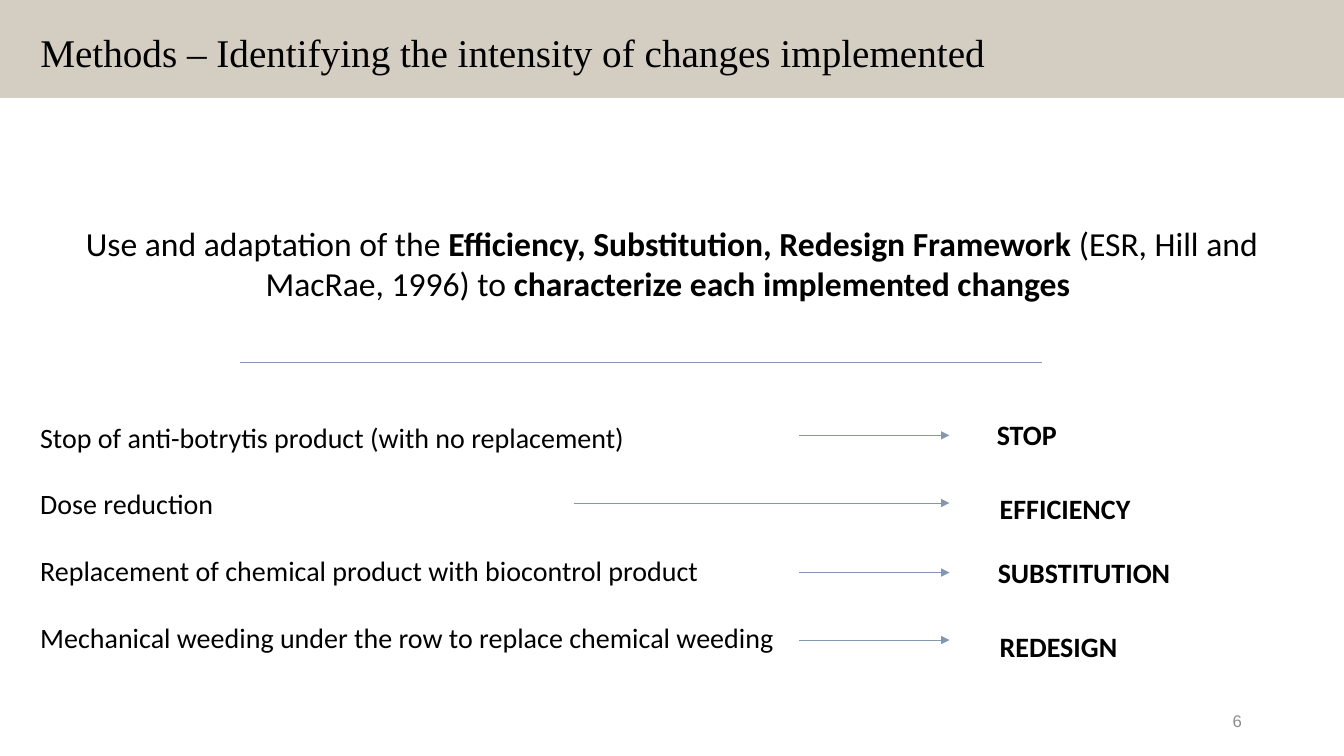
from lxml import etree
from pptx import Presentation
from pptx.dml.color import RGBColor
from pptx.enum import shapes, text
from pptx.oxml.ns import qn
from pptx.util import Pt

deck = Presentation()
deck.slide_width, deck.slide_height = Pt(960), Pt(540)
slide = deck.slides.add_slide(deck.slide_layouts[5])
items = slide.shapes


def write(words, left, top, width, height, box=None, size=20, font="Calibri",
          color="000000", bold=False, align="LEFT", anchor="TOP", gap=0):
    """Fill a box with paragraphs; each is a string or a list of (text, bold) runs."""
    box = box or items.add_textbox(0, 0, 0, 0)
    box.left, box.top, box.width, box.height = map(Pt, (left, top, width, height))
    frame = box.text_frame
    frame.word_wrap = True
    frame.auto_size = text.MSO_AUTO_SIZE.NONE
    frame.vertical_anchor = text.MSO_ANCHOR[anchor]
    for n, line in enumerate(words):
        para = frame.add_paragraph() if n else frame.paragraphs[0]
        para.alignment = text.PP_ALIGN[align]
        para.space_before = Pt(gap if n else 0)
        for part, heavy in [(line, bold)] if isinstance(line, str) else line:
            run = para.add_run()
            run.text = part
            run.font.name, run.font.size, run.font.bold = font, Pt(size), heavy
            run.font.color.rgb = RGBColor.from_string(color)


def rule(start, end, y, arrow=True):
    line = items.add_connector(shapes.MSO_CONNECTOR.STRAIGHT, Pt(start), Pt(y), Pt(end), Pt(y))
    line.line.color.rgb = RGBColor.from_string("8497B0")
    line.line.width = Pt(0.5)
    props = line.element.spPr
    if arrow:
        etree.SubElement(props.find(qn("a:ln")), qn("a:tailEnd"), type="triangle")
    etree.SubElement(props, qn("a:effectLst"))


band = items.add_shape(shapes.MSO_SHAPE.FLOWCHART_PROCESS, 0, 0, Pt(960), Pt(70))
band.shadow.inherit = False
band.fill.solid()
band.fill.fore_color.rgb = RGBColor.from_string("D4CEC2")
band.line.fill.background()
items.title.element.addprevious(band.element)
write(["Methods – Identifying the intensity of changes implemented"],
      21.6, 16.6, 858, 41, box=items.title, size=28, font="Times New Roman")

write([[("Use and adaptation of the ", False),
        ("Efficiency, Substitution, Redesign Framework ", True),
        ("(ESR, Hill and MacRae, 1996) to ", False),
        ("characterize each implemented changes ", True)]],
      14.4, 155.5, 931, 65.5, size=24, align="CENTER")
rule(171.4, 744.5, 258.5, arrow=False)

write(["Stop of anti-botrytis product (with no replacement)",
       "Dose reduction",
       "Replacement of chemical product with biocontrol product",
       "Mechanical weeding under the row to replace chemical weeding"],
      21.6, 296.6, 629, 201, gap=23.7)

# Level, label left and top, arrow start and height
levels = [("STOP", 704.9, 294.5, 571, 311),
          ("EFFICIENCY", 707, 347.8, 409.7, 359.3),
          ("SUBSTITUTION", 705.6, 393.1, 571, 409),
          ("REDESIGN", 707, 446.4, 571, 457.2)]
for level, left, top, start, y in levels:
    rule(start, 678.2, y)
    write([level], left, top, 157.7, 31.7, bold=True)

write(["6"], 678.2, 500.4, 216, 28.8, size=12, font="Arial", color="8C8C8C",
      align="RIGHT", anchor="MIDDLE")

deck.save("out.pptx")
